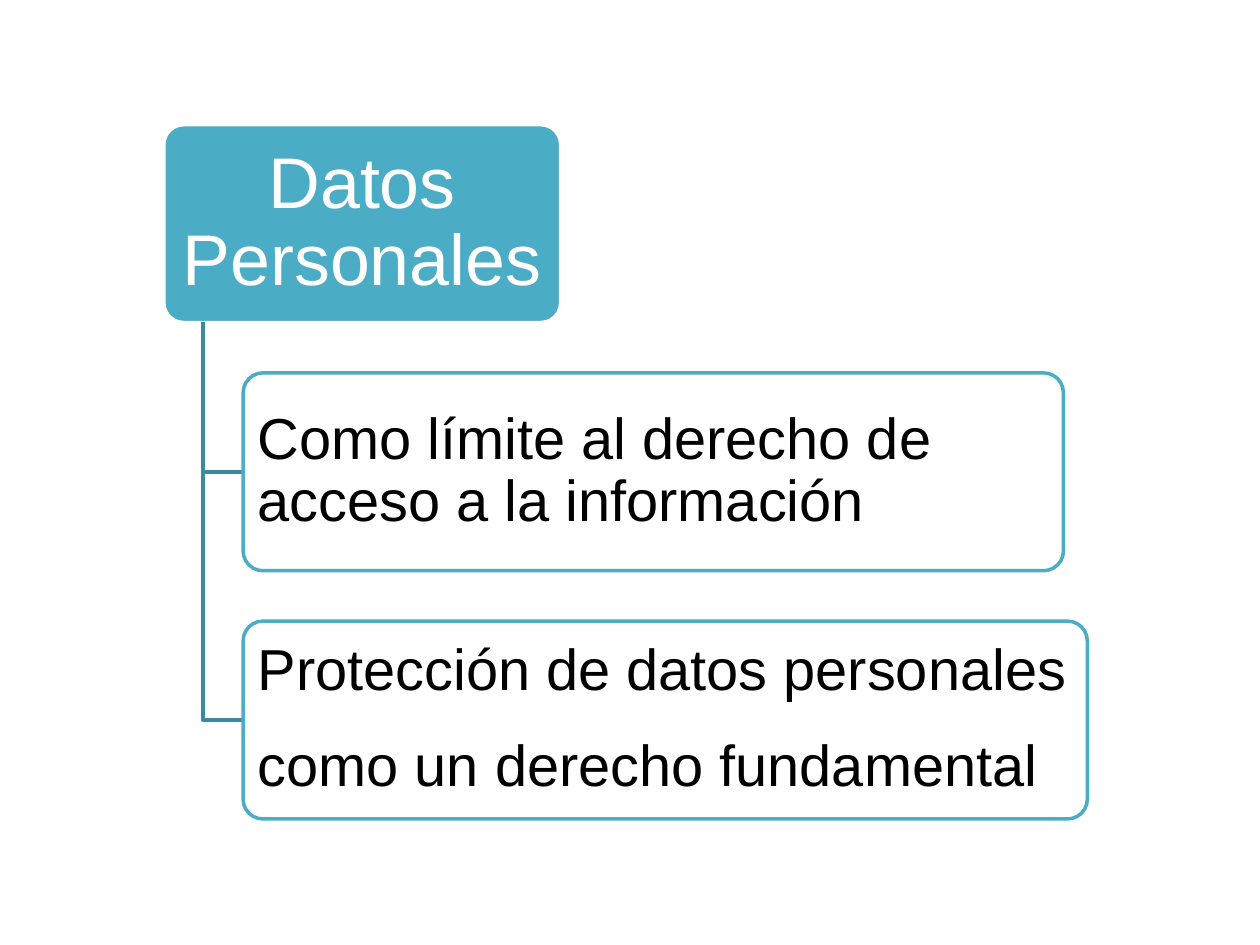
from dataclasses import dataclass

from lxml import etree
from pptx import Presentation
from pptx.dml.color import RGBColor
from pptx.enum import shapes, text
from pptx.oxml import ns
from pptx.util import Inches, Pt


@dataclass(frozen=True)
class Theme:
    font: str = "Arial"
    teal: RGBColor = RGBColor(0x4B, 0xAC, 0xC6)
    dark: RGBColor = RGBColor(0x3C, 0x8A, 0x9F)
    white: RGBColor = RGBColor(0xFF, 0xFF, 0xFF)
    black: RGBColor = RGBColor(0, 0, 0)
    head: int = 41
    body: int = 33
    line: int = 2


@dataclass(frozen=True)
class Node:
    label: str
    left: float
    width: float
    root: bool = False


THEME = Theme()
TOP, HIGH, PITCH = 0.99, 1.57, 1.97
TRUNK = 1.61
NODES = [
    Node("Datos Personales ", 1.3, 3.15, True),
    Node("Como límite al derecho de \vacceso a la información", 1.93, 6.51),
    Node("Protección de datos personales \vcomo un derecho fundamental", 1.93, 6.7),
]


def draw_node(slide, node: Node, top: float) -> None:
    box = slide.shapes.add_shape(
        shapes.MSO_SHAPE.ROUNDED_RECTANGLE,
        Inches(node.left), Inches(top), Inches(node.width), Inches(HIGH))
    box.adjustments[0] = 0.1
    box.shadow.inherit = False
    box.fill.solid()
    box.fill.fore_color.rgb = THEME.teal if node.root else THEME.white
    box.line.color.rgb = THEME.white if node.root else THEME.teal
    box.line.width = Pt(THEME.line)
    if not node.root:
        tint = box.fill._xPr.find(ns.qn("a:solidFill"))[0]
        etree.SubElement(tint, ns.qn("a:alpha"), val="90000")

    frame = box.text_frame
    frame.word_wrap = True
    frame.vertical_anchor = text.MSO_ANCHOR.MIDDLE
    frame.margin_left = frame.margin_right = Inches(0.09 if node.root else 0.07)
    frame.margin_top = frame.margin_bottom = Inches(0.06 if node.root else 0.05)
    frame.text = node.label
    para = frame.paragraphs[0]
    para.alignment = text.PP_ALIGN.CENTER if node.root else text.PP_ALIGN.LEFT
    para.line_spacing = 0.9
    for run in para.runs:
        run.font.name = THEME.font
        run.font.size = Pt(THEME.head if node.root else THEME.body)
        run.font.color.rgb = THEME.white if node.root else THEME.black


def draw_elbow(slide, node: Node, top: float) -> None:
    mid = Inches(top + HIGH / 2)
    pen = slide.shapes.build_freeform(Inches(TRUNK), Inches(TOP + HIGH))
    pen.add_line_segments(
        [(Inches(TRUNK), mid), (Inches(node.left), mid)], close=False)
    elbow = pen.convert_to_shape()
    elbow.shadow.inherit = False
    elbow.fill.background()
    elbow.line.color.rgb = THEME.dark
    elbow.line.width = Pt(THEME.line)


def main() -> None:
    deck = Presentation()
    deck.slide_width, deck.slide_height = Inches(10), Inches(7.5)
    slide = deck.slides.add_slide(deck.slide_layouts[6])
    for row, node in enumerate(NODES):
        top = TOP + row * PITCH
        if not node.root:
            draw_elbow(slide, node, top)
        draw_node(slide, node, top)
    deck.save("out.pptx")


if __name__ == "__main__":
    main()
